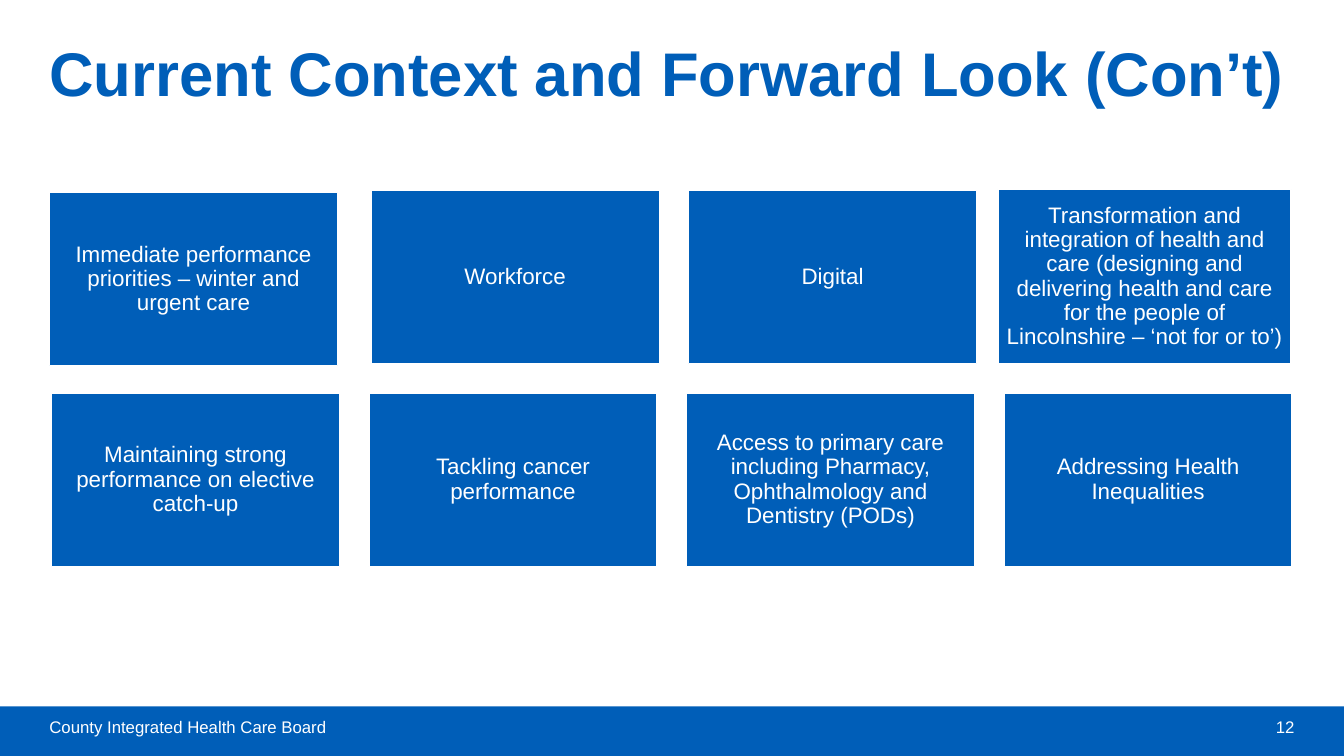
from collections import namedtuple

from pptx import Presentation
from pptx.dml.color import RGBColor
from pptx.enum.shapes import MSO_SHAPE
from pptx.enum.text import MSO_ANCHOR, PP_ALIGN
from pptx.util import Pt

RECTANGLE = MSO_SHAPE.RECTANGLE
MIDDLE = MSO_ANCHOR.MIDDLE
LEFT, CENTER, RIGHT = PP_ALIGN.LEFT, PP_ALIGN.CENTER, PP_ALIGN.RIGHT

BLUE = RGBColor(0x00, 0x5E, 0xB8)
WHITE = RGBColor(0xFF, 0xFF, 0xFF)

PAGE_WIDTH, PAGE_HEIGHT = 960, 540
MARGIN = 35.3
CONTENT_WIDTH = PAGE_WIDTH - 2 * MARGIN
FOOTER_TOP = 504.6
CARD_WIDTH, CARD_HEIGHT = 205.9, 123.8
CARD_PITCH = 226.8

Box = namedtuple("Box", "left top width height")

TOP_CARDS = [
    (Box(MARGIN, 137.5, CARD_WIDTH, CARD_HEIGHT),
     "Immediate performance priorities – winter and urgent care"),
    (Box(265, 136.1, CARD_WIDTH, CARD_HEIGHT), "Workforce"),
    (Box(491.8, 136.1, CARD_WIDTH, CARD_HEIGHT), "Digital"),
    (Box(712.8, 135.4, 209.5, 124.6),
     "Transformation and integration of health and care (designing and "
     "delivering health and care for the people of Lincolnshire – "
     "‘not for or to’)"),
]
BOTTOM_ROW = Box(36.7, 280.8, 3 * CARD_PITCH + CARD_WIDTH, CARD_HEIGHT)
BOTTOM_TEXTS = [
    "Maintaining strong performance on elective catch-up",
    "Tackling cancer performance",
    "Access to primary care including Pharmacy, Ophthalmology and "
    "Dentistry (PODs)",
    "Addressing Health Inequalities",
]


def in_points(box):
    return [Pt(length) for length in box]


def write(shape, text, size, color, align=LEFT, inset=0, bold=False,
          line_spacing=1.0):
    """Fill a shape with one vertically centred paragraph."""
    frame = shape.text_frame
    frame.word_wrap = True
    frame.vertical_anchor = MIDDLE
    frame.margin_left = frame.margin_right = Pt(inset)
    frame.margin_top = frame.margin_bottom = Pt(inset)
    para = frame.paragraphs[0]
    para.text = text
    para.alignment = align
    para.line_spacing = line_spacing
    para.font.name = "Arial"
    para.font.size = Pt(size)
    para.font.bold = bold
    para.font.color.rgb = color


def add_blue_rectangle(page, box):
    shape = page.shapes.add_shape(RECTANGLE, *in_points(box))
    shape.shadow.inherit = False
    shape.fill.solid()
    shape.fill.fore_color.rgb = BLUE
    shape.line.fill.background()
    return shape


def add_footer(page, box):
    add_blue_rectangle(page, box)
    right = box.left + box.width - MARGIN
    name_box = Box(box.left + MARGIN, box.top, 607, 28.8)
    number_box = Box(right - 102, box.top, 102, 28.8)
    for text_box, text, align in (
        (name_box, "County Integrated Health Care Board", LEFT),
        (number_box, "12", RIGHT),
    ):
        shape = page.shapes.add_textbox(*in_points(text_box))
        write(shape, text, 12, WHITE, align)


def add_title(page, box):
    shape = page.shapes.add_textbox(*in_points(box))
    write(shape, "Current Context and Forward Look (Con’t)", 44, BLUE,
          bold=True, line_spacing=0.9)


def add_card(page, box, text):
    card = add_blue_rectangle(page, box)
    card.line.color.rgb = WHITE
    card.line.width = Pt(1)
    write(card, text, 16, WHITE, CENTER, inset=5, line_spacing=0.9)


def add_card_row(page, box, texts):
    for column, text in enumerate(texts):
        left = box.left + column * CARD_PITCH
        add_card(page, Box(left, box.top, CARD_WIDTH, box.height), text)


def main():
    deck = Presentation()
    deck.slide_width, deck.slide_height = Pt(PAGE_WIDTH), Pt(PAGE_HEIGHT)
    page = deck.slides.add_slide(deck.slide_layouts[6])
    add_footer(page, Box(0, FOOTER_TOP, PAGE_WIDTH, PAGE_HEIGHT - FOOTER_TOP))
    add_title(page, Box(MARGIN, 12.2, CONTENT_WIDTH, 85))
    for box, text in TOP_CARDS:
        add_card(page, box, text)
    add_card_row(page, BOTTOM_ROW, BOTTOM_TEXTS)
    deck.save("out.pptx")


if __name__ == "__main__":
    main()
